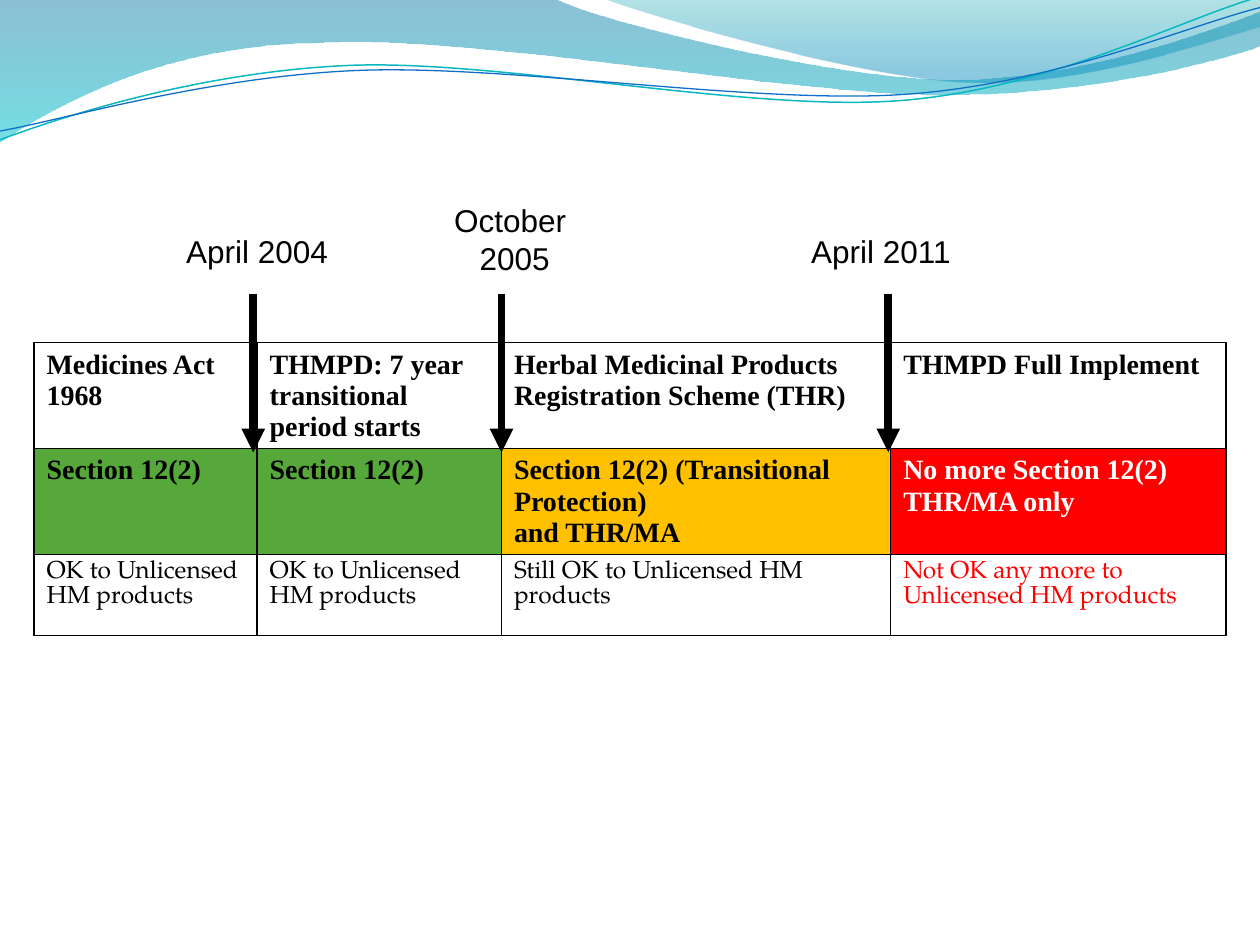
from lxml.etree import SubElement
from pptx import Presentation
from pptx.dml.color import RGBColor
from pptx.enum.shapes import MSO_CONNECTOR as Connector
from pptx.enum.text import PP_ALIGN as Align
from pptx.oxml import parse_xml
from pptx.oxml.ns import nsdecls, qn
from pptx.util import Inches, Pt


def color(hex_value):
    return RGBColor.from_string(hex_value)


def trace(shapes, start, segments, closed):
    builder = shapes.build_freeform(Inches(start[0]), Inches(start[1]))
    builder.add_line_segments(
        [(Inches(x), Inches(y)) for segment in segments for x, y in segment], close=closed)
    outline = builder.convert_to_shape()
    outline.shadow.inherit = False
    steps = iter(list(outline._element.spPr.iter(qn("a:lnTo"))))
    for segment in segments:
        first, *others = [next(steps) for _ in segment]
        if others:
            curve = parse_xml(f'<a:cubicBezTo {nsdecls("a")}/>')
            first.addprevious(curve)
            for step in [first, *others]:
                curve.append(step[0])
                step.getparent().remove(step)
    return outline


deck = Presentation()
deck.slide_width, deck.slide_height = Inches(10), Inches(7.5)
slide = deck.slides.add_slide(deck.slide_layouts[6])
shapes = slide.shapes

waves = [
    ((0, -0.01), [
        [(4.4, -0.01)],
        [(4.76, 0.17), (6.64, 0.63), (7.58, 0.63)],
        [(8.53, 0.63), (9.58, 0.26), (10, 0.09)],
        [(10.01, 0.36)],
        [(9.83, 0.44), (8.7, 0.76), (7.46, 0.75)],
        [(6.22, 0.75), (3.82, 0.28), (2.57, 0.34)],
        [(1.29, 0.35), (0.46, 0.83), (-0.01, 1.13)],
        [(0, -0.01)],
    ], [(0, "0074A1", 45), (1, "00C6CF", 55)]),
    ((4.79, -0.01), [
        [(5.09, 0.11), (6.82, 0.62), (7.69, 0.65)],
        [(8.56, 0.69), (9.61, 0.32), (10, 0.21)],
        [(10, 0)],
        [(4.79, -0.01)],
    ], [(0, "00A1A9", 30), (0.8, "008BBF", 45)]),
]
for start, segments, stops in waves:
    wave = trace(shapes, start, segments, True)
    wave.line.fill.background()
    wave.fill.gradient()
    wave.fill.gradient_angle = 270
    for stop, (position, hue, opacity) in zip(wave.fill.gradient_stops, stops):
        stop.position = position
        stop.color.rgb = color(hue)
    for rgb, (_, _, opacity) in zip(wave._element.spPr.iter(qn("a:srgbClr")), stops):
        SubElement(rgb, qn("a:alpha")).set("val", str(opacity * 1000))

ripples = [
    ((0, 1.11), [
        [(0.48, 0.93), (1.58, 0.57), (2.77, 0.52)],
        [(3.95, 0.47), (5.93, 0.89), (7.13, 0.8)],
        [(8.33, 0.71), (9.38, 0.15), (9.98, -0.02)],
    ], "0AB8BF", 0.85),
    ((0, 1.04), [
        [(0.47, 0.96), (1.64, 0.61), (2.83, 0.56)],
        [(4.03, 0.51), (5.97, 0.83), (7.17, 0.75)],
        [(8.36, 0.67), (9.41, 0.21), (10, 0.06)],
    ], "0F6FC6", 0.75),
]
for start, segments, hue, weight in ripples:
    ripple = trace(shapes, start, segments, False)
    ripple.fill.background()
    ripple.line.color.rgb = color(hue)
    ripple.line.width = Pt(weight)

heading = {"name": "Times New Roman", "size": Pt(16), "bold": True}
remark = {"name": "TeX Gyre Pagella", "size": Pt(14), "bold": False}
spaced = {"space_before": Pt(2.8), "line_spacing": 1.0}
black, white, red, green, amber = "000000", "FFFFFF", "FF0000", "55A839", "FFC000"
stages = [
    (0.84, heading, {}, [
        ("Medicines Act 1968", black, None),
        ("THMPD: 7 year\ntransitional period starts", black, None),
        ("Herbal Medicinal Products Registration Scheme (THR)", black, None),
        ("THMPD Full Implement", black, None)]),
    (0.84, heading, {}, [
        ("Section 12(2)", black, green),
        ("Section 12(2)", black, green),
        ("Section 12(2) (Transitional Protection)\nand THR/MA", black, amber),
        ("No more Section 12(2)\nTHR/MA only", white, red)]),
    (0.64, remark, spaced, [
        ("OK to Unlicensed HM products", black, None),
        ("OK to Unlicensed HM products", black, None),
        ("Still OK to Unlicensed HM products", black, None),
        ("Not OK any more to Unlicensed HM products", red, None)]),
]
timeline = shapes.add_table(3, 4, Inches(0.27), Inches(2.72), Inches(9.46), Inches(2.32)).table
for column, width in zip(timeline.columns, [1.77, 1.94, 3.09, 2.66]):
    column.width = Inches(width)
for row, (height, lettering, spacing, entries) in zip(timeline.rows, stages):
    row.height = Inches(height)
    for cell, (wording, ink, ground) in zip(row.cells, entries):
        cell.text = wording
        for paragraph in cell.text_frame.paragraphs:
            for key, value in spacing.items():
                setattr(paragraph, key, value)
            for key, value in lettering.items():
                setattr(paragraph.runs[0].font, key, value)
            paragraph.runs[0].font.color.rgb = color(ink)
        if ground:
            cell.fill.solid()
            cell.fill.fore_color.rgb = color(ground)
        else:
            cell.fill.background()
        borders = cell._tc.get_or_add_tcPr()
        for order, side in enumerate(["lnL", "lnR", "lnT", "lnB"]):
            borders.insert(order, parse_xml(
                f'<a:{side} {nsdecls("a")} w="12700"><a:solidFill>'
                f'<a:srgbClr val="{black}"/></a:solidFill></a:{side}>'))

milestones = [
    ("April 2004", 2.01, (1.38, 1.79, 1.34, 0.4), Align.LEFT),
    ("October  2005", 3.98, (3.5, 1.55, 1.1, 0.7), Align.CENTER),
    ("April 2011", 7.05, (6.34, 1.79, 1.34, 0.4), Align.LEFT),
]
date_format = {"name": "Arial", "size": Pt(18)}
for date, x, place, alignment in milestones:
    arrow = shapes.add_connector(
        Connector.STRAIGHT, Inches(x), Inches(2.33), Inches(x), Inches(3.59))
    arrow.line.color.rgb = color(black)
    arrow.line.width = Pt(4.5)
    SubElement(arrow.line._get_or_add_ln(), qn("a:tailEnd")).set("type", "triangle")
    SubElement(arrow._element.spPr, qn("a:effectLst"))

    label = shapes.add_textbox(*[Inches(length) for length in place]).text_frame
    label.word_wrap = True
    label.text = date
    label.paragraphs[0].alignment = alignment
    label.paragraphs[0].space_before = Pt(9)
    date_font = label.paragraphs[0].runs[0].font
    for key, value in date_format.items():
        setattr(date_font, key, value)
    date_font.color.rgb = color(black)

deck.save("out.pptx")
